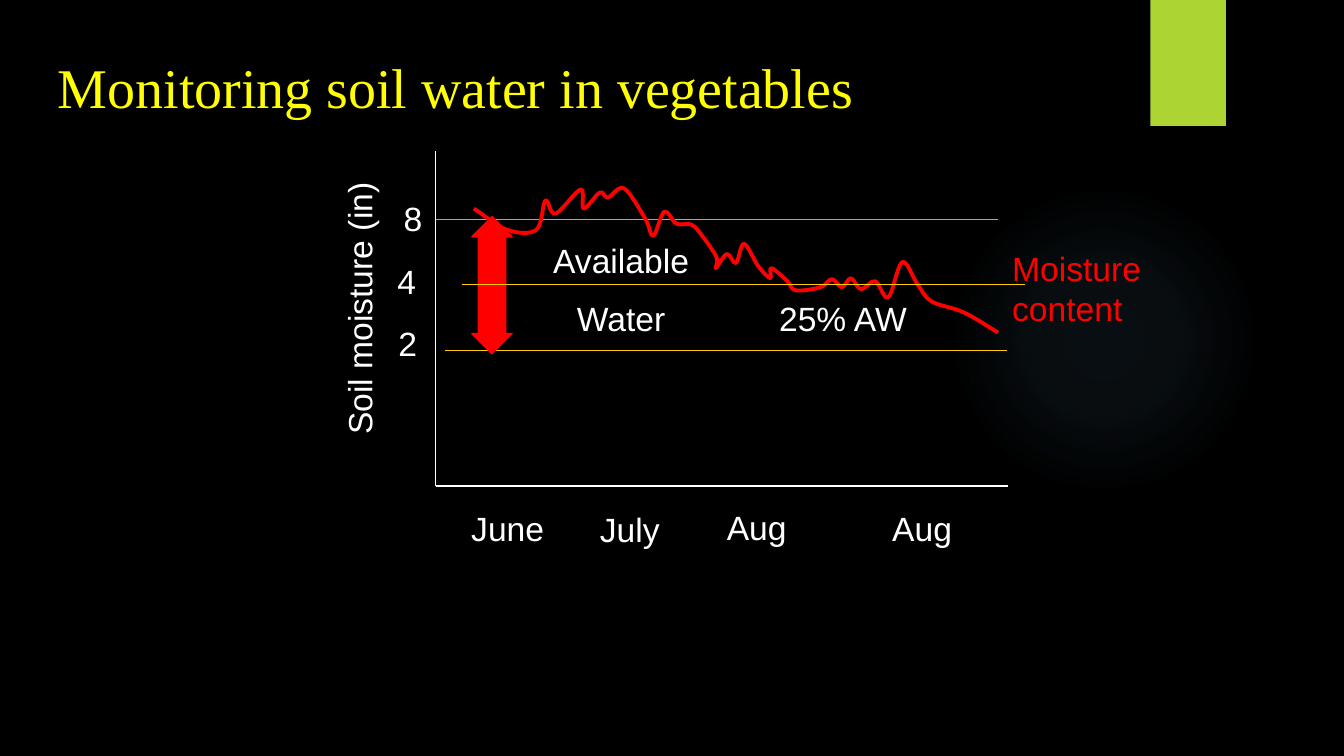
from dataclasses import dataclass

from lxml import etree
from pptx import Presentation
from pptx import util as u
from pptx.dml.color import RGBColor
from pptx.enum import shapes, text
from pptx.oxml import ns


@dataclass(frozen=True)
class Theme:
    background: str = "000000"
    ink: str = "FFFFFF"
    title: str = "FFFF00"
    moisture: str = "FF0000"
    full: str = "99CC00"
    limit: str = "FFCC00"
    accent: str = "ACD433"
    glow: str = "7AC4F0"
    body_font: str = "Arial"
    title_font: str = "Times New Roman"
    body_size: int = 24
    title_size: int = 40
    paragraph_gap: int = 13
    thin: float = 1
    thick: float = 2.75


def rgb(color):
    return RGBColor.from_string(color)


def add_child(parent, tag, **attributes):
    return etree.SubElement(parent, ns.qn(tag), **attributes)


class SlideBuilder:
    def __init__(self, slide, theme):
        self.slide = slide
        self.theme = theme
        slide.background.fill.solid()
        slide.background.fill.fore_color.rgb = rgb(theme.background)

    def shape(self, kind, box, color, outlined=False):
        shape = self.slide.shapes.add_shape(kind, *map(u.Inches, box))
        shape.shadow.inherit = False
        shape.fill.solid()
        shape.fill.fore_color.rgb = rgb(color)
        if outlined:
            shape.line.color.rgb = rgb(color)
            shape.line.width = u.Pt(self.theme.thin)
        else:
            shape.line.fill.background()
        return shape

    def glow(self, box, stops):
        """Circle fading outwards; stops are (position %, opacity %)."""
        shape = self.shape(shapes.MSO_SHAPE.OVAL, box, self.theme.glow)
        solid = shape.fill._xPr.find(ns.qn("a:solidFill"))
        gradient = etree.Element(ns.qn("a:gradFill"), rotWithShape="1")
        stop_list = add_child(gradient, "a:gsLst")
        for position, opacity in stops:
            stop = add_child(stop_list, "a:gs", pos=str(position * 1000))
            color = add_child(stop, "a:srgbClr", val=self.theme.glow)
            add_child(color, "a:alpha", val=str(opacity * 1000))
        circle = add_child(gradient, "a:path", path="circle")
        add_child(circle, "a:fillToRect", l="50000", t="50000", r="50000", b="50000")
        solid.getparent().replace(solid, gradient)

    def line(self, start, end, color):
        connector = self.slide.shapes.add_connector(
            shapes.MSO_CONNECTOR.STRAIGHT, *map(u.Inches, start + end))
        connector.line.color.rgb = rgb(color)
        connector.line.width = u.Pt(self.theme.thin)
        add_child(connector._element.spPr, "a:effectLst")

    def curve(self, points, color):
        """Open line through the points, smoothed with Catmull-Rom tangents."""
        corners = [(u.Inches(x), u.Inches(y)) for x, y in points]
        builder = self.slide.shapes.build_freeform(*corners[0], scale=1.0)
        builder.add_line_segments(corners[1:], close=False)
        shape = builder.convert_to_shape()
        shape.shadow.inherit = False
        shape.fill.background()
        shape.line.color.rgb = rgb(color)
        shape.line.width = u.Pt(self.theme.thick)

        # Mirrored neighbours give the two ends their tangents
        local = [(x - shape.left, y - shape.top) for x, y in corners]
        before = tuple(2 * a - b for a, b in zip(local[0], local[1]))
        after = tuple(2 * a - b for a, b in zip(local[-1], local[-2]))
        knots = [before, *local, after]
        segments = list(shape._element.iter(ns.qn("a:lnTo")))
        for segment, p0, p1, p2, p3 in zip(segments, knots, knots[1:], knots[2:], knots[3:]):
            first = [b + (c - a) / 6 for a, b, c in zip(p0, p1, p2)]
            second = [c - (d - b) / 6 for b, c, d in zip(p1, p2, p3)]
            bezier = etree.Element(ns.qn("a:cubicBezTo"))
            for x, y in (first, second, p2):
                add_child(bezier, "a:pt", x=str(round(x)), y=str(round(y)))
            segment.getparent().replace(segment, bezier)

    def label(self, box, *lines, color=None, font=None, size=None,
              align=text.PP_ALIGN.CENTER, rotation=0):
        shape = self.slide.shapes.add_textbox(*map(u.Inches, box))
        shape.rotation = rotation
        frame = shape.text_frame
        frame.word_wrap = True
        frame.auto_size = text.MSO_AUTO_SIZE.SHAPE_TO_FIT_TEXT
        for index, line in enumerate(lines):
            paragraph = frame.add_paragraph() if index else frame.paragraphs[0]
            paragraph.alignment = align
            if index:
                paragraph.space_before = u.Pt(self.theme.paragraph_gap)
            run = paragraph.add_run()
            run.text = line
            run.font.name = font or self.theme.body_font
            run.font.size = u.Pt(size or self.theme.body_size)
            run.font.color.rgb = rgb(color or self.theme.ink)


MOISTURE_POINTS = [
    (4.7, 2.07), (5.03, 2.28), (5.32, 2.28), (5.41, 1.99), (5.51, 2.12),
    (5.76, 1.88), (5.79, 2.07), (5.95, 1.91), (6.03, 1.96), (6.19, 1.87),
    (6.4, 2.17), (6.48, 2.34), (6.59, 2.1), (6.71, 2.22), (6.86, 2.23),
    (6.98, 2.36), (7.11, 2.56), (7.1, 2.66), (7.21, 2.52), (7.3, 2.61),
    (7.38, 2.42), (7.52, 2.64), (7.64, 2.76), (7.65, 2.66), (7.81, 2.79),
    (7.89, 2.88), (8.14, 2.85), (8.25, 2.77), (8.35, 2.85), (8.44, 2.76),
    (8.54, 2.87), (8.68, 2.79), (8.81, 2.95), (8.95, 2.6), (9.1, 2.82),
    (9.24, 2.99), (9.56, 3.1), (9.9, 3.3),
]


def main():
    theme = Theme()
    presentation = Presentation()
    presentation.slide_width = u.Inches(13.33)
    presentation.slide_height = u.Inches(7.5)
    slide = presentation.slides.add_slide(presentation.slide_layouts[6])
    builder = SlideBuilder(slide, theme)

    # Backdrop
    builder.glow((9.41, 1.83, 3.08, 3.08), [(0, 7), (36, 6), (69, 0), (100, 0)])
    builder.shape(shapes.MSO_SHAPE.RECTANGLE, (11.41, 0, 0.75, 1.25), theme.accent)

    # Axes, field capacity and the moisture curve
    builder.line((4.32, 1.5), (4.32, 4.82), theme.ink)
    builder.line((4.32, 4.82), (10, 4.82), theme.ink)
    builder.line((4.32, 2.18), (9.9, 2.18), theme.full)
    builder.curve(MOISTURE_POINTS, theme.moisture)

    # Axis labels
    for left, top, name in [(4.56, 4.99, "June"), (5.77, 5, "July"),
                            (7.03, 4.98, "Aug"), (8.67, 4.99, "Aug"),
                            (3.62, 1.91, "8"), (3.56, 2.54, "4"), (3.57, 3.15, "2")]:
        builder.label((left, top, 0.95, 0.5), name)
    builder.label((2.18, 2.78, 2.76, 0.5), "Soil moisture (in)",
                  align=text.PP_ALIGN.LEFT, rotation=270)
    builder.label((9.94, 2.41, 1.73, 0.91), "Moisture content",
                  color=theme.moisture, align=text.PP_ALIGN.LEFT)

    # Title
    builder.label((0.22, 0.47, 8.6, 0.77), "Monitoring soil water in vegetables",
                  color=theme.title, font=theme.title_font, size=theme.title_size)

    # Available water range and its limits
    builder.line((4.41, 3.48), (9.99, 3.48), theme.limit)
    arrow = builder.shape(shapes.MSO_SHAPE.UP_DOWN_ARROW, (4.68, 2.15, 0.4, 1.36),
                          theme.moisture, outlined=True)
    arrow.adjustments[0] = 0.5
    arrow.adjustments[1] = 0.68
    builder.label((4.97, 2.33, 2.38, 1.11), "Available", "Water")
    builder.line((4.58, 2.82), (10.17, 2.82), theme.limit)
    builder.label((7.17, 2.91, 2.38, 0.51), "25% AW")

    presentation.save("out.pptx")


if __name__ == "__main__":
    main()
